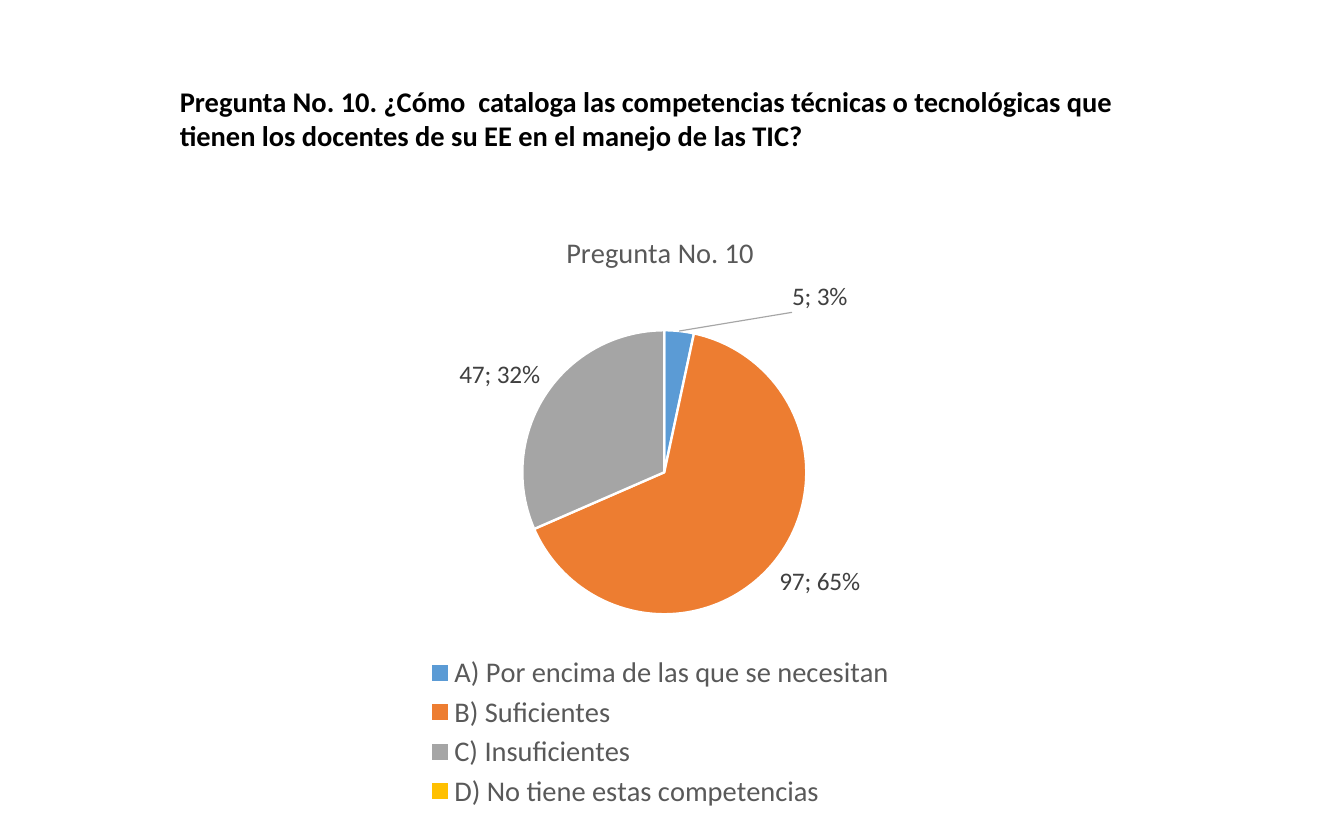
from lxml import etree
from pptx import Presentation
from pptx.chart.data import CategoryChartData
from pptx.dml.color import RGBColor
from pptx.enum.chart import XL_CHART_TYPE, XL_LABEL_POSITION, XL_LEGEND_POSITION
from pptx.enum.text import MSO_ANCHOR, PP_ALIGN
from pptx.oxml import parse_xml
from pptx.oxml.ns import nsdecls, qn
from pptx.util import Inches, Pt

PIE = XL_CHART_TYPE.PIE
OUTSIDE_END = XL_LABEL_POSITION.OUTSIDE_END
BOTTOM = XL_LEGEND_POSITION.BOTTOM
LEFT = PP_ALIGN.LEFT
TOP = MSO_ANCHOR.TOP

BLACK = RGBColor(0x00, 0x00, 0x00)
WHITE = RGBColor(0xFF, 0xFF, 0xFF)
LABEL_GRAY = RGBColor(0x40, 0x40, 0x40)
TEXT_GRAY = RGBColor(0x59, 0x59, 0x59)
LEADER_GRAY = RGBColor(0xA6, 0xA6, 0xA6)
BLUE = RGBColor(0x5B, 0x9B, 0xD5)
ORANGE = RGBColor(0xED, 0x7D, 0x31)
GRAY = RGBColor(0xA5, 0xA5, 0xA5)
YELLOW = RGBColor(0xFF, 0xC0, 0x00)

FONT = "Calibri"
QUESTION = (
    "Pregunta No. 10. ¿Cómo  cataloga las competencias técnicas o tecnológicas "
    "que tienen los docentes de su EE en el manejo de las TIC?"
)
ANSWERS = [
    ("A) Por encima de las que se necesitan", 5, BLUE),
    ("B) Suficientes", 97, ORANGE),
    ("C) Insuficientes", 47, GRAY),
    ("D) No tiene estas competencias", 0, YELLOW),
]


def style_font(font, size, color, bold=False):
    """Set the typeface, size, colour and weight of a font."""
    font.name = FONT
    font.size = Pt(size)
    font.bold = bold
    font.color.rgb = color


def manual_layout(**values):
    """Return a chart layout element with the given settings."""
    settings = "".join(f'<c:{name} val="{value}"/>' for name, value in values.items())
    return f'<c:layout {nsdecls("c")}><c:manualLayout>{settings}</c:manualLayout></c:layout>'


def place_part(part, index, **values):
    """Give a chart part a fixed place within the chart."""
    for layout in part.findall(qn("c:layout")):
        part.remove(layout)
    part.insert(index, parse_xml(manual_layout(xMode="edge", yMode="edge", **values)))


def add_question(slide, left, top, width, height):
    """Place the question in the title placeholder."""
    title = slide.shapes.title
    title.left, title.top, title.width, title.height = map(Inches, (left, top, width, height))
    text_frame = title.text_frame
    text_frame.word_wrap = True
    text_frame.vertical_anchor = TOP
    text_frame.text = QUESTION
    paragraph = text_frame.paragraphs[0]
    paragraph.alignment = LEFT
    paragraph.line_spacing = 1.0
    paragraph.space_before = Pt(0)
    style_font(paragraph.font, 18, BLACK, bold=True)


def label_slices(chart, series):
    """Label slices with value and share, moving the first and hiding the last."""
    labels = series.data_labels
    labels.show_value = True
    labels.show_percentage = True
    labels.position = OUTSIDE_END
    style_font(labels.font, 16, LABEL_GRAY)
    group = chart.element.xpath(".//c:ser/c:dLbls")[0]
    separator = etree.Element(qn("c:separator"))
    separator.text = "; "
    group.find(qn("c:showBubbleSize")).addnext(separator)
    for leader in group.findall(qn("c:showLeaderLines")):
        group.remove(leader)
    separator.addnext(parse_xml(f'<c:showLeaderLines {nsdecls("c")} val="1"/>'))
    group.append(parse_xml(
        f'<c:leaderLines {nsdecls("c", "a")}><c:spPr><a:ln w="9525"><a:solidFill>'
        f'<a:srgbClr val="{LEADER_GRAY}"/></a:solidFill></a:ln></c:spPr></c:leaderLines>'
    ))
    group.insert(0, parse_xml(
        f'<c:dLbl {nsdecls("c")}><c:idx val="0"/>{manual_layout(x=0.13, y=-0.02)}'
        '<c:dLblPos val="bestFit"/><c:showLegendKey val="0"/><c:showVal val="1"/>'
        '<c:showCatName val="0"/><c:showSerName val="0"/><c:showPercent val="1"/>'
        '<c:showBubbleSize val="0"/><c:separator>; </c:separator></c:dLbl>'
    ))
    group.insert(1, parse_xml(
        f'<c:dLbl {nsdecls("c")}><c:idx val="{len(ANSWERS) - 1}"/><c:delete val="1"/></c:dLbl>'
    ))


def add_answers_chart(slide, left, top, width, height):
    """Draw the pie of answers with its title, labels and legend."""
    data = CategoryChartData()
    data.categories = [answer for answer, _, _ in ANSWERS]
    data.add_series("Pregunta No. 10", [count for _, count, _ in ANSWERS])
    box = map(Inches, (left, top, width, height))
    chart = slide.shapes.add_chart(PIE, *box, data).chart
    style_font(chart.font, 10, BLACK)

    chart.has_title = True
    chart.chart_title.include_in_layout = False
    chart.chart_title.text_frame.text = "Pregunta No. 10"
    style_font(chart.chart_title.text_frame.paragraphs[0].font, 18, TEXT_GRAY)

    chart.has_legend = True
    chart.legend.position = BOTTOM
    chart.legend.include_in_layout = False
    style_font(chart.legend.font, 18, TEXT_GRAY)

    plot = chart.plots[0]
    plot.vary_by_categories = True
    series = plot.series[0]
    for index, (_, _, color) in enumerate(ANSWERS):
        slice_format = series.points[index].format
        slice_format.fill.solid()
        slice_format.fill.fore_color.rgb = color
        slice_format.line.color.rgb = WHITE
        slice_format.line.width = Pt(1.5)
    label_slices(chart, series)

    plot_area = chart.element.xpath(".//c:plotArea")[0]
    place_part(plot_area, 0, layoutTarget="inner", x=0.34, y=0.2, w=0.33, h=0.47)
    plot_layout = plot_area.find(qn("c:layout"))[0]
    plot_layout.insert(0, plot_layout.find(qn("c:layoutTarget")))
    legend = chart.element.xpath(".//c:legend")[0]
    place_part(legend, 1, x=0.22, y=0.73, w=0.56, h=0.27)


def main():
    """Build the presentation and save it."""
    presentation = Presentation()
    presentation.slide_width = Inches(11.81)
    presentation.slide_height = Inches(7.38)
    slide = presentation.slides.add_slide(presentation.slide_layouts[5])
    add_question(slide, 1.48, 0.69, 8.57, 0.71)
    add_answers_chart(slide, 2.01, 1.84, 7.58, 5.31)
    presentation.save("out.pptx")


if __name__ == "__main__":
    main()
